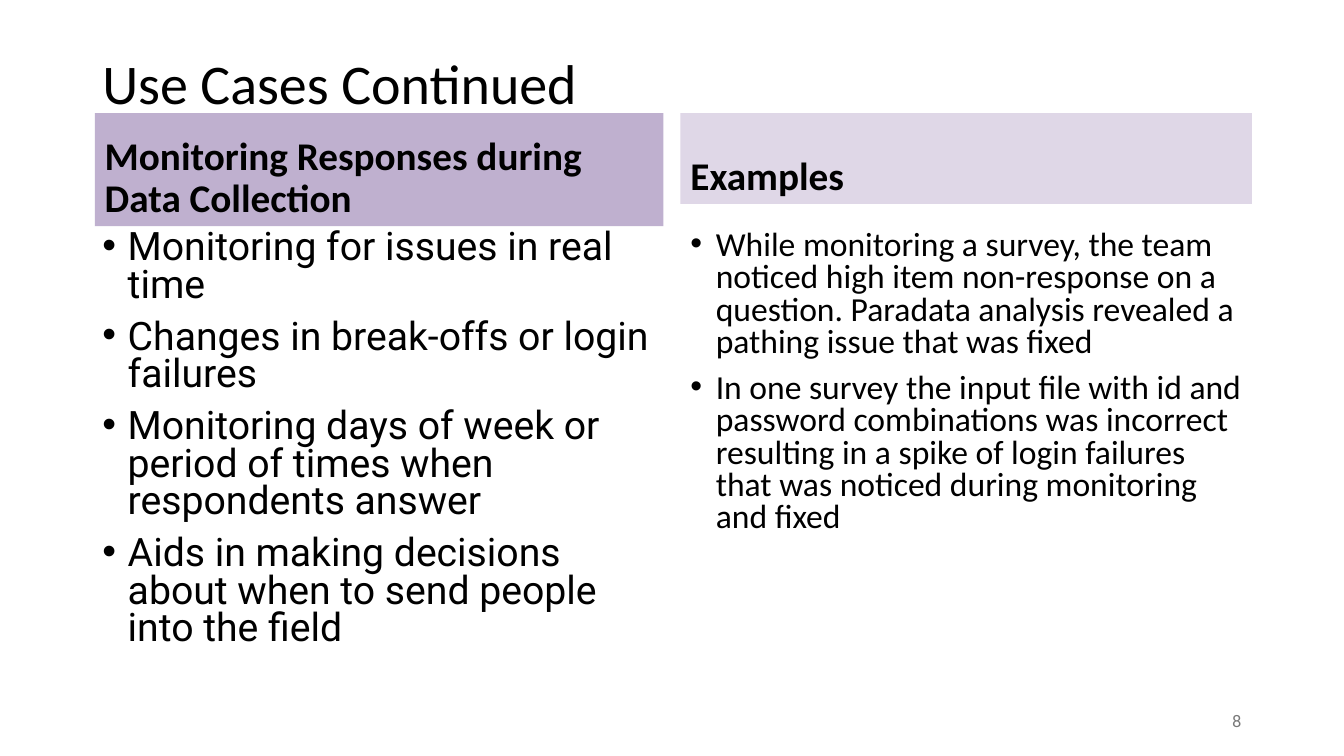
from lxml.etree import SubElement
from pptx import Presentation
from pptx.dml.color import RGBColor
from pptx.enum.text import MSO_ANCHOR, PP_ALIGN
from pptx.oxml.ns import qn
from pptx.util import Cm, Pt

BLACK = RGBColor(0x00, 0x00, 0x00)
GRAY = RGBColor(0x79, 0x79, 0x79)
PURPLE = RGBColor(0xBF, 0xB0, 0xCF)
LILAC = RGBColor(0xDF, 0xD7, 0xE7)

TITLE = "Use Cases Continued"
NUMBER = "8"
COLUMNS = [
    {
        "head": "Monitoring Responses during Data Collection",
        "head_box": (2.39, 2.85, 14.33, 2.85),
        "fill": PURPLE,
        "list_box": (2.33, 5.69, 14.33, 11.5),
        "font": ("Roboto", 28),
        "points": [
            "Monitoring for issues in real time",
            "Changes in break-offs or login failures",
            "Monitoring days of week or period of times when respondents answer",
            "Aids in making decisions about when to send people into the field",
        ],
    },
    {
        "head": "Examples",
        "head_box": (17.15, 2.85, 14.4, 2.29),
        "fill": LILAC,
        "list_box": (17.15, 5.69, 14.4, 11.5),
        "font": ("Calibri", 24),
        "points": [
            "While monitoring a survey, the team noticed high item non-response "
            "on a question. Paradata analysis revealed a pathing issue that was fixed",
            "In one survey the input file with id and password combinations was "
            "incorrect resulting in a spike of login failures that was noticed "
            "during monitoring and fixed",
        ],
    },
]


def add_text(slide, box, lines, face, size, anchor, space=0.9, color=BLACK,
             bold=False, align=PP_ALIGN.LEFT, bullet=False, fill=None):
    shape = slide.shapes.add_textbox(*[Cm(n) for n in box])
    if fill is not None:
        shape.fill.solid()
        shape.fill.fore_color.rgb = fill
    frame = shape.text_frame
    frame.word_wrap = True
    frame.vertical_anchor = anchor
    for i, line in enumerate(lines):
        para = frame.paragraphs[0] if i == 0 else frame.add_paragraph()
        para.text = line
        para.alignment = align
        para.line_spacing = space
        para.space_before = Pt(10 if i else 0)
        if bullet:
            props = para._p.get_or_add_pPr()
            props.set("marL", str(Cm(0.64)))
            props.set("indent", str(-Cm(0.64)))
            SubElement(props, qn("a:buFont"), typeface="Arial")
            SubElement(props, qn("a:buChar"), char="•")
        para.font.name = face
        para.font.size = Pt(size)
        para.font.bold = bold
        para.font.color.rgb = color


def main():
    deck = Presentation()
    deck.slide_width, deck.slide_height = Cm(33.87), Cm(19.05)
    slide = deck.slides.add_slide(deck.slide_layouts[6])

    add_text(slide, (2.33, 1.02, 29.21, 2.29), [TITLE], "Calibri", 40,
             MSO_ANCHOR.MIDDLE)
    for col in COLUMNS:
        add_text(slide, col["head_box"], [col["head"]], "Calibri", 28,
                 MSO_ANCHOR.BOTTOM, bold=True, fill=col["fill"])
        add_text(slide, col["list_box"], col["points"], *col["font"],
                 MSO_ANCHOR.TOP, space=0.8, bullet=True)
    add_text(slide, (23.92, 17.66, 7.62, 1.01), [NUMBER], "Roboto", 12,
             MSO_ANCHOR.MIDDLE, space=1.0, color=GRAY, align=PP_ALIGN.RIGHT)

    deck.save("out.pptx")


if __name__ == "__main__":
    main()
